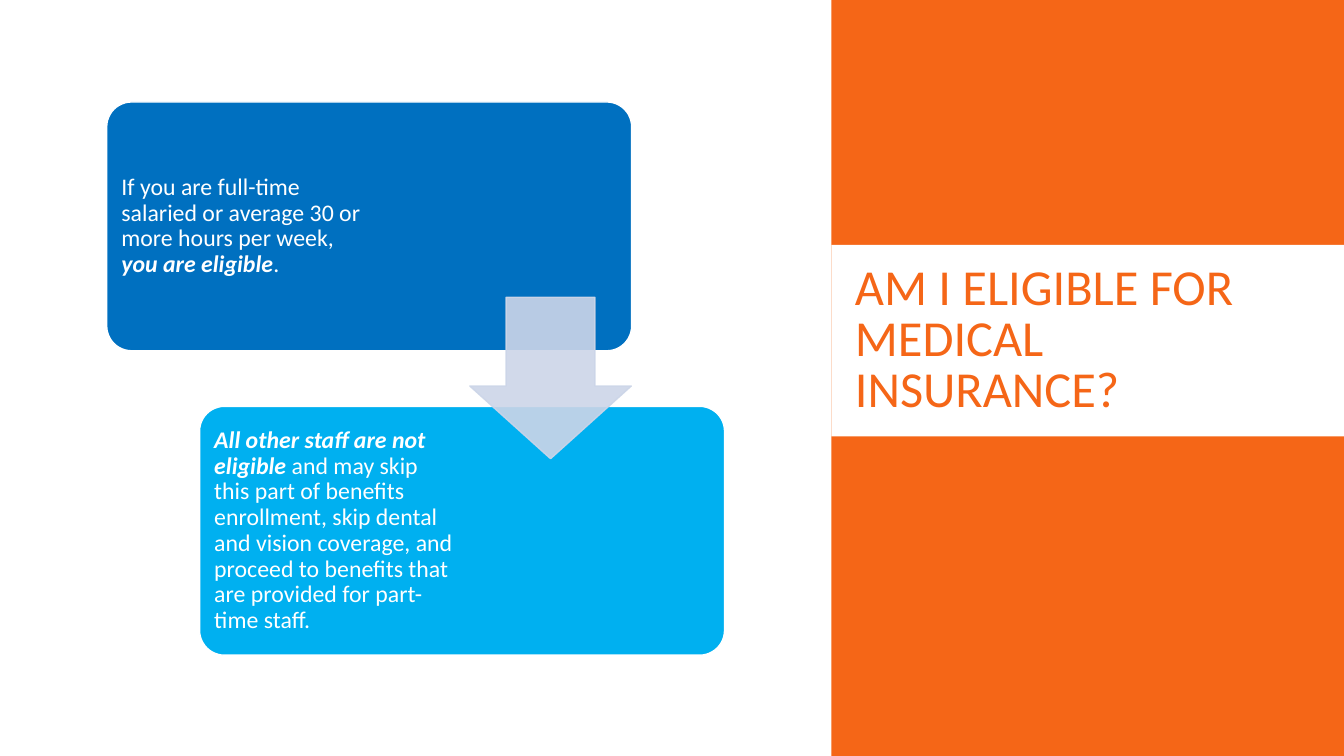
from lxml import etree
from pptx import Presentation
from pptx.dml.color import RGBColor
from pptx.enum.shapes import MSO_SHAPE
from pptx.enum.text import MSO_ANCHOR, PP_ALIGN
from pptx.oxml.ns import qn
from pptx.util import Cm, Pt

RECTANGLE = MSO_SHAPE.RECTANGLE
ROUNDED = MSO_SHAPE.ROUNDED_RECTANGLE
DOWN_ARROW = MSO_SHAPE.DOWN_ARROW
MIDDLE = MSO_ANCHOR.MIDDLE
LEFT = PP_ALIGN.LEFT

FONT = "Calibri"
WHITE = "FFFFFF"
ORANGE = "F56617"
ARROW_BLUE = "CCD5E8"
TITLE_ONLY = 5

SLIDE_WIDTH, SLIDE_HEIGHT = 33.87, 19.05
PANEL_LEFT = 20.95
CARD_LEFT, CARD_TOP = 2.69, 2.57
CARD_WIDTH, CARD_HEIGHT = 13.23, 6.27
STEP_X, STEP_Y = 2.34, 7.67
TEXT_MARGIN = 0.19

# Each card: fill, text width, runs as (text, emphasised)
CARDS = [
    ("0070C0", 6.76, [
        ("If you are full-time salaried or average 30 or more hours per week, ", False),
        ("you are eligible", True),
        (".", False),
    ]),
    ("00B0F0", 6.45, [
        ("All other staff are not eligible", True),
        (" and may skip this part of benefits enrollment, skip dental and vision "
         "coverage, and proceed to benefits that are provided for part-time staff.", False),
    ]),
]


def set_color(color_format, value):
    color_format.rgb = RGBColor.from_string(value)


def add_block(slide, kind, box, fill, line=None, adjustments=()):
    shape = slide.shapes.add_shape(kind, *[Cm(length) for length in box])
    shape.shadow.inherit = False
    shape.fill.solid()
    set_color(shape.fill.fore_color, fill)
    if line:
        shape.line.width = Pt(1)
        set_color(shape.line.color, line)
    else:
        shape.line.fill.background()
    for index, value in enumerate(adjustments):
        shape.adjustments[index] = value
    return shape


def set_opacity(shape, percent):
    for color in shape._element.spPr.iter(qn("a:srgbClr")):
        etree.SubElement(color, qn("a:alpha"), val=str(percent * 1000))


def add_run(paragraph, text, size, color, emphasised=False):
    run = paragraph.add_run()
    run.text = text
    run.font.name = FONT
    run.font.size = Pt(size)
    run.font.bold = run.font.italic = emphasised
    set_color(run.font.color, color)


def add_card(slide, left, top, fill, text_width, runs):
    add_block(slide, ROUNDED, (left, top, CARD_WIDTH, CARD_HEIGHT), fill, WHITE, [0.1])
    text_box = slide.shapes.add_textbox(
        Cm(left + TEXT_MARGIN), Cm(top + TEXT_MARGIN),
        Cm(text_width), Cm(CARD_HEIGHT - 2 * TEXT_MARGIN))
    frame = text_box.text_frame
    frame.word_wrap = True
    frame.vertical_anchor = MIDDLE
    frame.margin_left = frame.margin_right = Cm(0.18)
    frame.margin_top = frame.margin_bottom = Cm(0.18)
    paragraph = frame.paragraphs[0]
    paragraph.line_spacing = 0.9
    for text, emphasised in runs:
        add_run(paragraph, text, 17, WHITE, emphasised)


def place_title(slide, text):
    title = slide.shapes.title
    title.left, title.top, title.width, title.height = Cm(21.29), Cm(6.5), Cm(11.48), Cm(4.19)
    title.text_frame.word_wrap = True
    title.text_frame.vertical_anchor = MIDDLE
    paragraph = title.text_frame.paragraphs[0]
    paragraph.alignment = LEFT
    paragraph.line_spacing = 0.85
    add_run(paragraph, text, 36, ORANGE)
    # Bring the title in front of its band
    slide.shapes._spTree.append(title._element)


def main():
    presentation = Presentation()
    presentation.slide_width = Cm(SLIDE_WIDTH)
    presentation.slide_height = Cm(SLIDE_HEIGHT)
    slide = presentation.slides.add_slide(presentation.slide_layouts[TITLE_ONLY])

    # Orange panel with the white title band
    panel_width = SLIDE_WIDTH - PANEL_LEFT
    add_block(slide, RECTANGLE, (PANEL_LEFT, 0, panel_width, SLIDE_HEIGHT), ORANGE)
    add_block(slide, RECTANGLE, (PANEL_LEFT, 6.17, panel_width, 4.83), WHITE)
    place_title(slide, "AM I ELIGIBLE FOR MEDICAL INSURANCE?")

    # Staggered cards
    for index, card in enumerate(CARDS):
        add_card(slide, CARD_LEFT + index * STEP_X, CARD_TOP + index * STEP_Y, *card)

    # Arrow between the cards
    arrow = add_block(slide, DOWN_ARROW, (11.84, 7.49, 4.07, 4.07),
                      ARROW_BLUE, ARROW_BLUE)
    arrow.adjustments[0] = 0.45
    arrow.adjustments[1] = 0.45
    # The shaft takes 55 % of the width, the head 45 % of the height
    arrow.adjustments[0] = 0.55
    set_opacity(arrow, 90)

    presentation.save("out.pptx")


if __name__ == "__main__":
    main()
